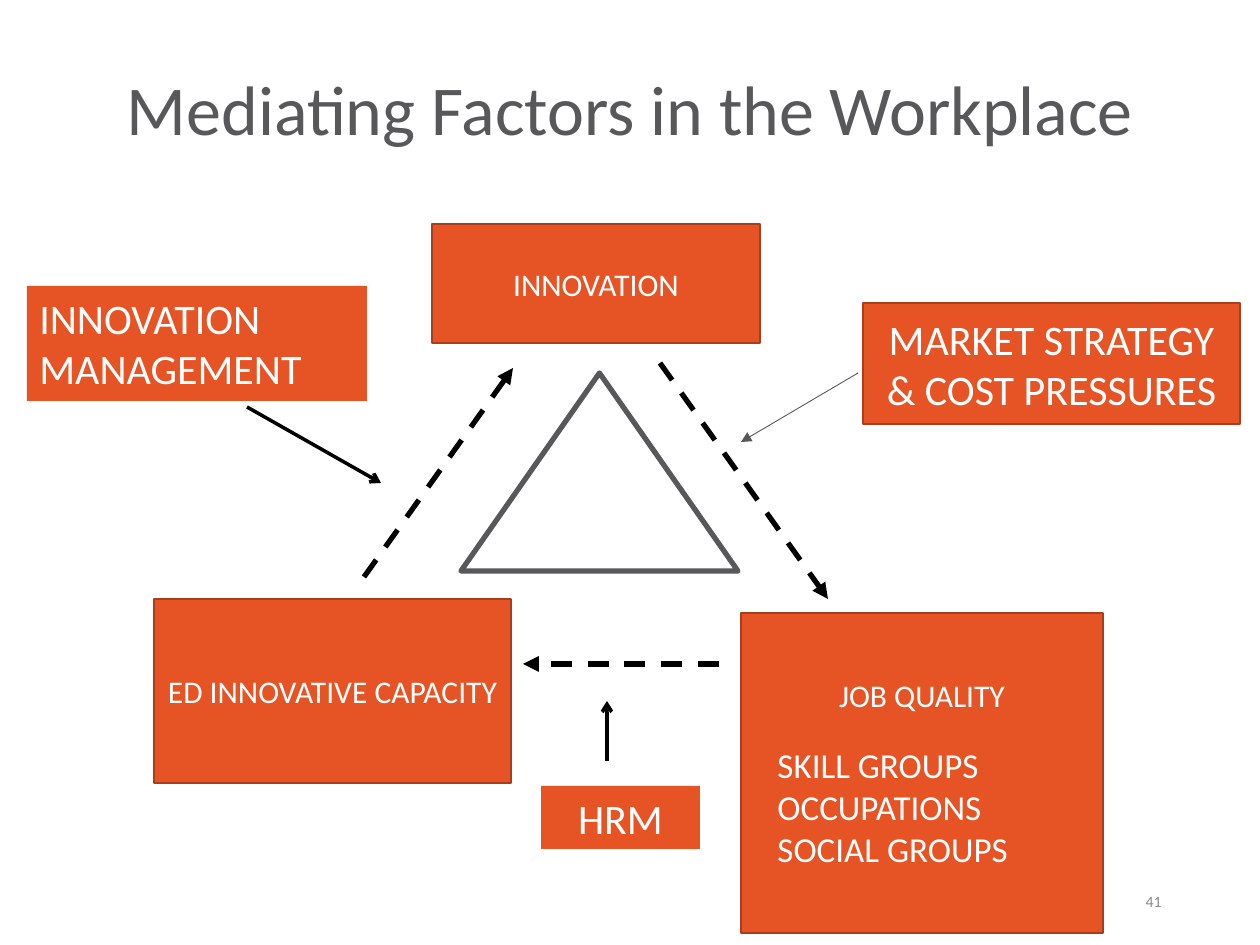
from dataclasses import dataclass

from lxml import etree
from pptx import Presentation
from pptx.dml.color import RGBColor
from pptx.enum.dml import MSO_LINE
from pptx.enum.shapes import MSO_CONNECTOR, MSO_SHAPE
from pptx.enum.text import MSO_ANCHOR, PP_ALIGN
from pptx.oxml.ns import qn
from pptx.util import Emu, Pt

EMU_PER_PX = 914400 / 126
FONT = "Calibri"
ORANGE, RUST, GREY = "E65425", "AA3E1B", "58585A"
WHITE, BLACK, NUMBER_GREY = "FFFFFF", "000000", "898989"
LEFT, CENTER, RIGHT = PP_ALIGN.LEFT, PP_ALIGN.CENTER, PP_ALIGN.RIGHT
TOP, MIDDLE = MSO_ANCHOR.TOP, MSO_ANCHOR.MIDDLE
RECTANGLE, TRIANGLE = MSO_SHAPE.RECTANGLE, MSO_SHAPE.ISOSCELES_TRIANGLE
STRAIGHT, DASH = MSO_CONNECTOR.STRAIGHT, MSO_LINE.DASH


@dataclass
class Line:
    text: str
    size: int
    align: PP_ALIGN = CENTER
    color: str = WHITE
    indent: int = 0
    space_before: int = 0
    spacing: float = 1.0


@dataclass
class Box:
    left: int
    top: int
    width: int
    height: int
    lines: list[Line]
    border: str | None = RUST
    anchor: MSO_ANCHOR = MIDDLE


@dataclass
class Arrow:
    start: tuple[int, int]
    end: tuple[int, int]
    width: float
    head: str
    color: str = BLACK
    dashed: bool = False


def px(value: int) -> Emu:
    return Emu(round(value * EMU_PER_PX))


def rgb(color: str) -> RGBColor:
    return RGBColor.from_string(color)


def write_lines(shape, lines: list[Line], anchor: MSO_ANCHOR) -> None:
    frame = shape.text_frame
    frame.word_wrap = True
    frame.vertical_anchor = anchor
    for index, line in enumerate(lines):
        paragraph = frame.add_paragraph() if index else frame.paragraphs[0]
        paragraph.alignment = line.align
        paragraph.line_spacing = line.spacing
        if line.space_before:
            paragraph.space_before = Pt(line.space_before)
        if line.indent:
            paragraph._p.get_or_add_pPr().set("marL", str(px(line.indent)))
        run = paragraph.add_run()
        run.text = line.text
        run.font.name = FONT
        run.font.size = Pt(line.size)
        run.font.color.rgb = rgb(line.color)


def add_label(slide, left: int, top: int, width: int, height: int, line: Line) -> None:
    shape = slide.shapes.add_textbox(px(left), px(top), px(width), px(height))
    write_lines(shape, [line], MIDDLE)


def add_box(slide, box: Box) -> None:
    shape = slide.shapes.add_shape(
        RECTANGLE, px(box.left), px(box.top), px(box.width), px(box.height))
    shape.shadow.inherit = False
    shape.fill.solid()
    shape.fill.fore_color.rgb = rgb(ORANGE)
    if box.border:
        shape.line.color.rgb = rgb(box.border)
        shape.line.width = Pt(1)
    else:
        shape.line.fill.background()
    write_lines(shape, box.lines, box.anchor)


def add_triangle(slide, left: int, top: int, width: int, height: int) -> None:
    shape = slide.shapes.add_shape(TRIANGLE, px(left), px(top), px(width), px(height))
    shape.shadow.inherit = False
    shape.fill.background()
    shape.line.color.rgb = rgb(GREY)
    shape.line.width = Pt(3)


def add_arrow(slide, arrow: Arrow) -> None:
    connector = slide.shapes.add_connector(
        STRAIGHT, *(px(value) for value in arrow.start + arrow.end))
    connector.line.color.rgb = rgb(arrow.color)
    connector.line.width = Pt(arrow.width)
    if arrow.dashed:
        connector.line.dash_style = DASH
    outline = connector.line._get_or_add_ln()
    etree.SubElement(outline, qn("a:tailEnd"), type=arrow.head)
    etree.SubElement(connector._element.spPr, qn("a:effectLst"))


BOXES = [
    Box(432, 224, 328, 119, [Line("INNOVATION", 18)]),
    Box(741, 613, 362, 320, [
        Line("JOB QUALITY", 18),
        Line("SKILL GROUPS", 20, LEFT, indent=24, space_before=17),
        Line("OCCUPATIONS", 20, LEFT, indent=24),
        Line("SOCIAL GROUPS", 20, LEFT, indent=24),
    ]),
    Box(154, 599, 357, 184, [Line("ED INNOVATIVE CAPACITY", 18)]),
    Box(27, 286, 340, 115,
        [Line("INNOVATION", 24, LEFT), Line("MANAGEMENT", 24, LEFT)], None, TOP),
    Box(541, 786, 159, 63, [Line("HRM", 24)], None, TOP),
    Box(863, 303, 377, 121, [Line("MARKET STRATEGY & COST PRESSURES", 24)]),
]

ARROWS = [
    Arrow((719, 664), (523, 664), 3, "triangle", dashed=True),
    Arrow((364, 577), (513, 368), 3, "triangle", dashed=True),
    Arrow((660, 363), (828, 599), 3, "triangle", dashed=True),
    Arrow((247, 407), (381, 483), 2, "arrow"),
    Arrow((607, 761), (607, 701), 2, "arrow"),
    Arrow((858, 373), (741, 442), 0.5, "triangle", GREY),
]


def main() -> None:
    presentation = Presentation()
    presentation.slide_width, presentation.slide_height = px(1260), px(945)
    slide = presentation.slides.add_slide(presentation.slide_layouts[6])
    add_label(slide, 87, 50, 1086, 125,
              Line("Mediating Factors in the Workplace", 40, color=GREY, spacing=0.9))
    for box in BOXES:
        add_box(slide, box)
    add_triangle(slide, 461, 373, 277, 198)
    for arrow in ARROWS:
        add_arrow(slide, arrow)
    add_label(slide, 890, 876, 284, 50, Line("41", 9, RIGHT, NUMBER_GREY))
    presentation.save("out.pptx")


if __name__ == "__main__":
    main()
